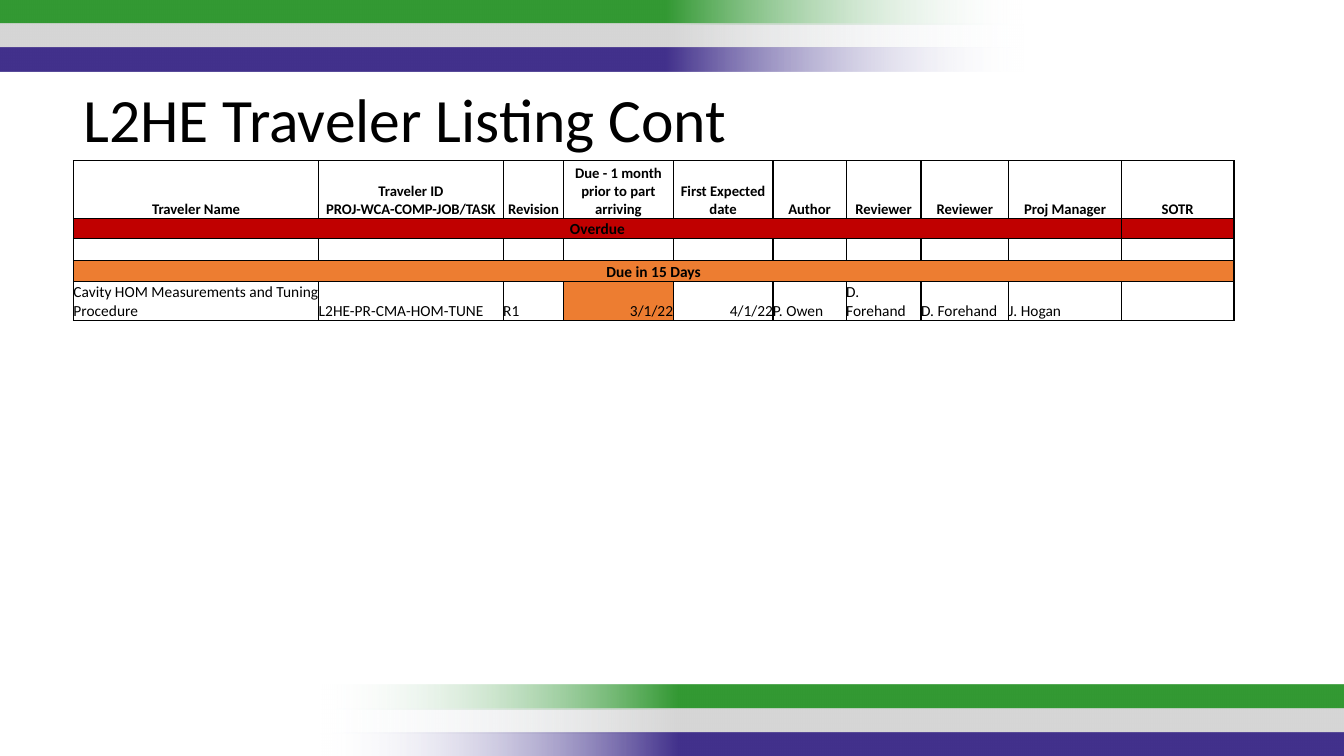
from dataclasses import dataclass

from lxml.etree import SubElement
from pptx import Presentation
from pptx.dml.color import RGBColor
from pptx.enum.shapes import MSO_SHAPE
from pptx.enum.text import MSO_ANCHOR, PP_ALIGN
from pptx.oxml.ns import qn
from pptx.util import Pt


@dataclass(frozen=True)
class Theme:
    """Colours, font and type sizes of the slide."""

    font: str = "Calibri"
    text: str = "000000"
    overdue: str = "C00000"
    due_soon: str = "ED7D31"
    fade: str = "F7FAFD"
    stripes: tuple = ("339933", "D6D6D6", "42318C")
    title_size: float = 44
    header_size: float = 10.5
    body_size: float = 11


THEME = Theme()
COLUMN_WIDTHS = (175.2, 131.8, 43.2, 78.2, 71.3, 52.3, 53.5, 62.6, 80.5, 80.4)
ROW_HEIGHTS = (41.3, 14.4, 15.6, 15.1, 27.8)
HEADERS = (
    "Traveler Name", "Traveler ID\nPROJ-WCA-COMP-JOB/TASK", "Revision",
    "Due - 1 month prior to part arriving", "First Expected date", "Author",
    "Reviewer", "Reviewer", "Proj Manager", "SOTR",
)
TRAVELER = (
    "Cavity HOM Measurements and Tuning Procedure", "L2HE-PR-CMA-HOM-TUNE", "R1",
    "3/1/22", "4/1/22", "P. Owen", "D. Forehand", "D. Forehand", "J. Hogan", "",
)
DATE_COLUMNS = (3, 4)
DUE_COLUMN = 3


def add_run(paragraph, text, size, bold=False):
    """Add one formatted run."""
    run = paragraph.add_run()
    run.text = text
    run.font.name = THEME.font
    run.font.size = Pt(size)
    run.font.bold = bold
    run.font.color.rgb = RGBColor.from_string(THEME.text)


def set_fading_fill(shape, color):
    """Fill a shape with a gradient from transparent to a solid colour."""
    shape.fill.gradient()
    shape.fill.gradient_angle = 0
    stop_list = shape.fill._fill._gradFill.find(qn("a:gsLst"))
    for stop in list(stop_list):
        stop_list.remove(stop)
    for position, stop_color in ((0, THEME.fade), (35, color), (100, color)):
        stop = SubElement(stop_list, qn("a:gs"), pos=str(position * 1000))
        value = SubElement(stop, qn("a:srgbClr"), val=stop_color)
        if position == 0:
            SubElement(value, qn("a:alpha"), val="0")


def add_stripes(slide, left, top, width, height, rotation):
    """Stack the fading stripes in the given box."""
    step = height / len(THEME.stripes)
    for index, color in enumerate(THEME.stripes):
        stripe = slide.shapes.add_shape(
            MSO_SHAPE.RECTANGLE, Pt(left), Pt(top + index * step), Pt(width), Pt(step + 0.4)
        )
        stripe.rotation = rotation
        stripe.shadow.inherit = False
        stripe.line.fill.background()
        set_fading_fill(stripe, color)


def add_title(slide, left, top, width, height):
    """Place the slide title in the given box."""
    title = slide.shapes.title
    title.left, title.top, title.width, title.height = map(Pt, (left, top, width, height))
    frame = title.text_frame
    frame.word_wrap = True
    frame.vertical_anchor = MSO_ANCHOR.TOP
    paragraph = frame.paragraphs[0]
    paragraph.alignment = PP_ALIGN.LEFT
    add_run(paragraph, "L2HE Traveler Listing Cont", THEME.title_size)


def set_borders(cell):
    """Draw a thin line on all four sides of a cell."""
    properties = cell._tc.get_or_add_tcPr()
    for index, side in enumerate(("a:lnL", "a:lnR", "a:lnT", "a:lnB")):
        line = properties.makeelement(qn(side), {"w": str(Pt(1))})
        properties.insert(index, line)
        fill = SubElement(line, qn("a:solidFill"))
        SubElement(fill, qn("a:srgbClr"), val=THEME.text)


def format_cell(cell, inset):
    """Give a cell its insets, anchor, borders and empty-text size."""
    cell.margin_left = cell.margin_right = cell.margin_top = Pt(inset)
    cell.margin_bottom = Pt(0)
    cell.vertical_anchor = MSO_ANCHOR.BOTTOM
    cell.fill.background()
    set_borders(cell)
    paragraph = cell.text_frame.paragraphs[0]
    SubElement(paragraph._p, qn("a:endParaRPr"), sz=str(int(THEME.body_size * 100)))


def fill_cell(cell, color):
    """Fill a cell with a solid colour."""
    cell.fill.solid()
    cell.fill.fore_color.rgb = RGBColor.from_string(color)


def write_cell(cell, text, size, alignment, bold=False):
    """Write text in a cell, with a line break at each newline."""
    paragraph = cell.text_frame.paragraphs[0]
    paragraph.alignment = alignment
    for index, line in enumerate(text.split("\n")):
        if index:
            paragraph.add_line_break()
        add_run(paragraph, line, size, bold)


def add_band(table, row, last_column, text, color):
    """Merge a row up to a column into a coloured band with a heading."""
    for column in range(len(COLUMN_WIDTHS)):
        fill_cell(table.cell(row, column), color)
    table.cell(row, 0).merge(table.cell(row, last_column))
    write_cell(table.cell(row, 0), text, THEME.body_size, PP_ALIGN.CENTER, True)


def add_traveler_table(slide, left, top):
    """Place the traveler table at the given corner."""
    table = slide.shapes.add_table(
        len(ROW_HEIGHTS), len(COLUMN_WIDTHS), Pt(left), Pt(top),
        Pt(sum(COLUMN_WIDTHS)), Pt(sum(ROW_HEIGHTS)),
    ).table
    table.first_row = table.horz_banding = False
    for column, width in zip(table.columns, COLUMN_WIDTHS):
        column.width = Pt(width)
    for index, (row, height) in enumerate(zip(table.rows, ROW_HEIGHTS)):
        row.height = Pt(height)
        for cell in row.cells:
            format_cell(cell, 0.6 if index < 3 else 0)
    for column, (header, value) in enumerate(zip(HEADERS, TRAVELER)):
        write_cell(table.cell(0, column), header, THEME.header_size, PP_ALIGN.CENTER, True)
        if value:
            alignment = PP_ALIGN.RIGHT if column in DATE_COLUMNS else PP_ALIGN.LEFT
            write_cell(table.cell(4, column), value, THEME.body_size, alignment)
    add_band(table, 1, 8, "Overdue", THEME.overdue)
    add_band(table, 3, 9, "Due in 15 Days", THEME.due_soon)
    fill_cell(table.cell(4, DUE_COLUMN), THEME.due_soon)


def main():
    """Build and save the slide."""
    presentation = Presentation()
    presentation.slide_width, presentation.slide_height = Pt(960), Pt(540)
    slide = presentation.slides.add_slide(presentation.slide_layouts[5])
    add_stripes(slide, -1, 0, 732, 50.7, 180)
    add_stripes(slide, 228.6, 489.4, 732, 50.7, 0)
    add_traveler_table(slide, 52.5, 114.8)
    add_title(slide, 52.5, 54, 742.3, 60.5)
    presentation.save("out.pptx")


if __name__ == "__main__":
    main()
